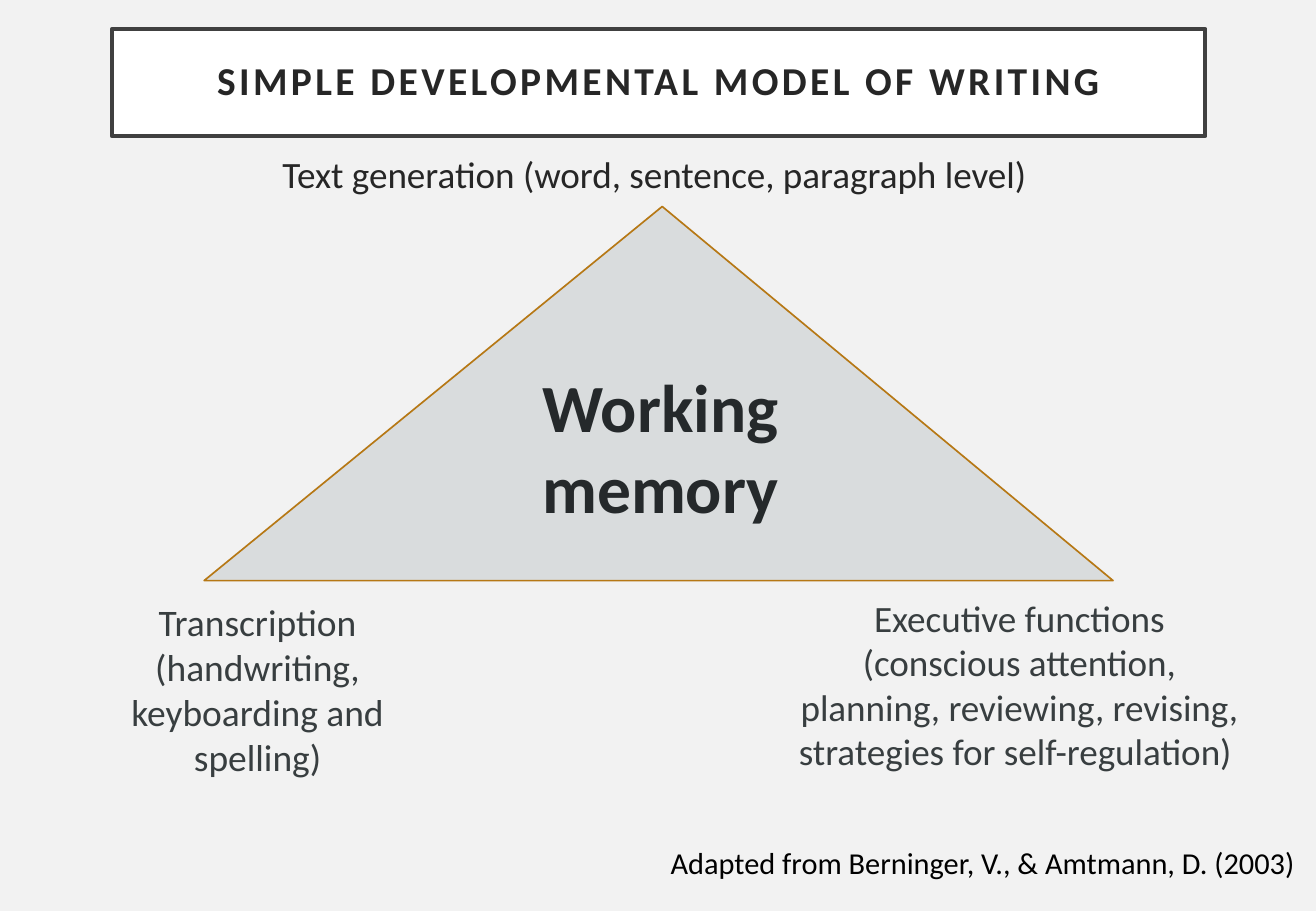
from lxml import etree
from pptx import Presentation
from pptx.dml.color import RGBColor
from pptx.enum import shapes, text
from pptx.oxml.ns import qn
from pptx.util import Inches, Pt

PAPER = RGBColor(0xF2, 0xF2, 0xF2)
WHITE = RGBColor(0xFF, 0xFF, 0xFF)
FRAME = RGBColor(0x40, 0x40, 0x40)
HEADING = RGBColor(0x26, 0x26, 0x26)
CORNER = RGBColor(0x38, 0x3E, 0x40)
CENTRE = RGBColor(0x25, 0x29, 0x2B)
BLACK = RGBColor(0x00, 0x00, 0x00)
GREY = RGBColor(0xB4, 0xBC, 0xBE)
OCHRE = RGBColor(0xB6, 0x78, 0x15)


def place(shape, left, top, width, height):
    shape.left, shape.top = Inches(left), Inches(top)
    shape.width, shape.height = Inches(width), Inches(height)


def write(shape, words, size, color, bold=False, align=text.PP_ALIGN.CENTER,
          anchor=text.MSO_ANCHOR.TOP):
    """Fill the shape with one formatted paragraph and return it."""
    frame = shape.text_frame
    frame.auto_size = text.MSO_AUTO_SIZE.NONE
    frame.word_wrap = True
    frame.vertical_anchor = anchor
    para = frame.paragraphs[0]
    para.text = words
    para.alignment = align
    para.font.name = "Calibri"
    para.font.size = Pt(size)
    para.font.bold = bold
    para.font.color.rgb = color
    return para


deck = Presentation()
deck.slide_width, deck.slide_height = Inches(10.83), Inches(7.5)
page = deck.slides.add_slide(deck.slide_layouts[1])
page.background.fill.solid()
page.background.fill.fore_color.rgb = PAPER

# Framed title
title = page.shapes.title
place(title, 0.92, 0.24, 9, 0.88)
title.fill.solid()
title.fill.fore_color.rgb = WHITE
title.line.color.rgb = FRAME
title.line.width = Pt(2.5)
para = write(title, "SIMPLE DEVELOPMENTAL MODEL OF WRITING", 23.4, HEADING,
             bold=True, anchor=text.MSO_ANCHOR.MIDDLE)
para.line_spacing = 0.9
para.runs[0].font._element.set("spc", "200")
frame = title.text_frame
frame.margin_left = frame.margin_right = Inches(0.2)
frame.margin_top = frame.margin_bottom = Inches(0.2)

# Label at the top corner
body = page.placeholders[1]
place(body, 0.92, 1.2, 9, 0.53)
para = write(body, "Text generation (word, sentence, paragraph level) ", 22, HEADING)
props = para._p.get_or_add_pPr()
props.set("marL", "0")
props.set("indent", "0")
props.insert(0, etree.Element(qn("a:buNone")))
para.space_before = Pt(10)

# Triangle
triangle = page.shapes.add_shape(
    shapes.MSO_SHAPE.ISOSCELES_TRIANGLE,
    Inches(1.68), Inches(1.7), Inches(7.48), Inches(3.08))
triangle.adjustments[0] = 0.504
triangle.shadow.inherit = False
triangle.fill.solid()
triangle.fill.fore_color.rgb = GREY
tint = triangle._element.spPr.find(qn("a:solidFill"))[0]
etree.SubElement(tint, qn("a:alpha"), val="40000")
triangle.line.color.rgb = OCHRE
triangle.line.width = Pt(1)
write(triangle, "Working memory", 40, CENTRE, bold=True,
      anchor=text.MSO_ANCHOR.MIDDLE)
triangle.text_frame.margin_bottom = Inches(0.72)

# Labels at the bottom corners
corners = [
    ("Executive functions (conscious attention, planning, reviewing, revising, "
     "strategies for self-regulation) ", 22, (6.46, 4.85, 3.86, 1.45), 0.1),
    ("Transcription (handwriting, keyboarding and spelling)",
     22.2, (0.43, 4.88, 3.38, 1.45), 0.2),
]
for words, size, area, margin in corners:
    label = page.shapes.add_textbox(*map(Inches, area))
    write(label, words, size, CORNER)
    label.text_frame.margin_left = label.text_frame.margin_right = Inches(margin)

# Credit line
credit = page.shapes.add_textbox(Inches(5.42), Inches(6.9), Inches(5.52), Inches(0.4))
write(credit, "Adapted from Berninger, V., & Amtmann, D. (2003)", 18, BLACK,
      align=text.PP_ALIGN.LEFT)
credit.text_frame.word_wrap = False

deck.save("out.pptx")
